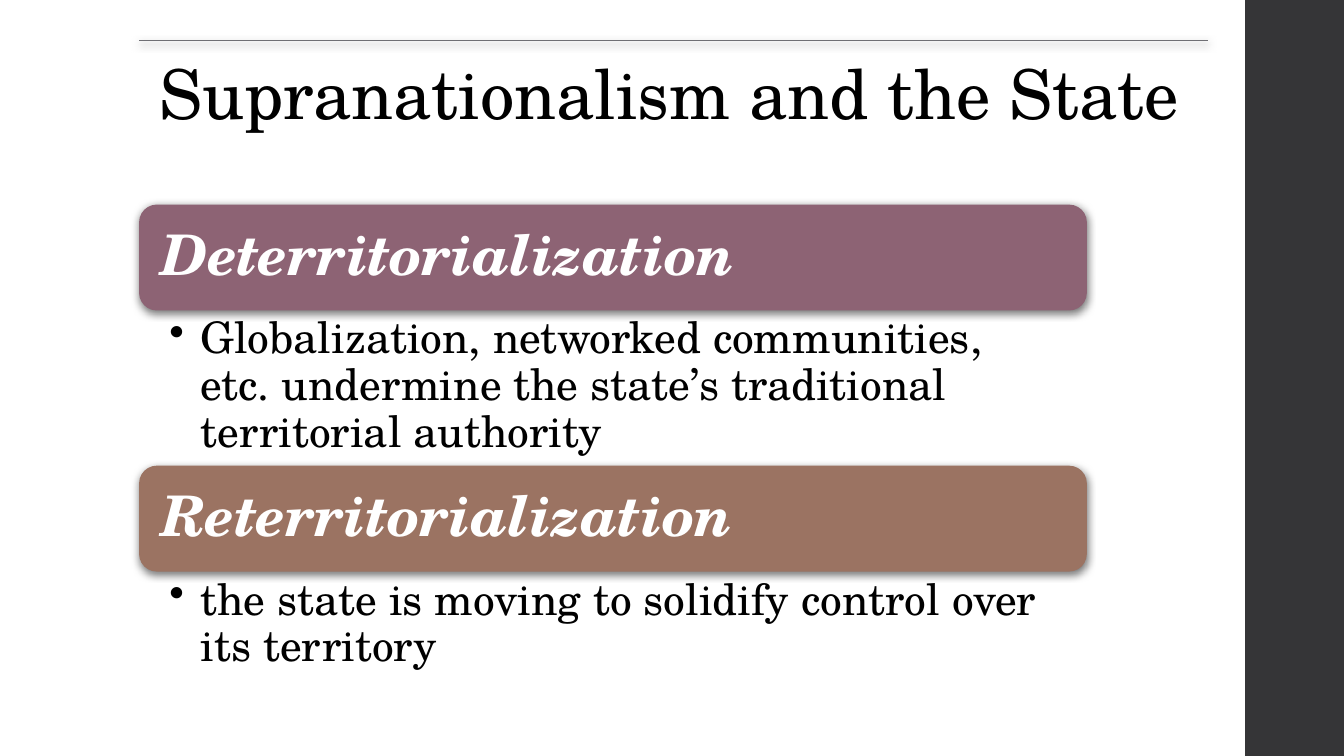
from lxml.etree import SubElement
from pptx import Presentation
from pptx.dml.color import RGBColor
from pptx.enum.shapes import MSO_CONNECTOR, MSO_SHAPE
from pptx.enum.text import MSO_ANCHOR, PP_ALIGN
from pptx.oxml.ns import qn
from pptx.util import Inches, Pt

FONT = "TeX Gyre Schola"
BLACK = RGBColor(0x00, 0x00, 0x00)
WHITE = RGBColor(0xFF, 0xFF, 0xFF)
DARK = RGBColor(0x35, 0x35, 0x37)
GRAY = RGBColor(0x6F, 0x6F, 0x74)
PLUM = RGBColor(0x8D, 0x63, 0x74)
BROWN = RGBColor(0x9B, 0x73, 0x62)

LEFT = 1.38
BAR_H = 1.05
TOPICS = [
    ("Deterritorialization", PLUM, 1.54,
     "Globalization, networked communities, etc. undermine "
     "the state’s traditional territorial authority"),
    ("Reterritorialization", BROWN, 1.06,
     "the state is moving to solidify control over its territory"),
]


def add_glow(item):
    """Give a shape or connector a soft shadow straight below it."""
    props = item._element.spPr
    for old in props.findall(qn("a:effectLst")):
        props.remove(old)
    effects = SubElement(props, qn("a:effectLst"))
    shade = SubElement(effects, qn("a:outerShdw"), blurRad=str(Pt(6)),
                       dist=str(Pt(2)), dir="5400000", rotWithShape="0")
    color = SubElement(shade, qn("a:srgbClr"), val=str(BLACK))
    SubElement(color, qn("a:alpha"), val="55000")


def add_block(slide, kind, box, fill):
    block = slide.shapes.add_shape(kind, *map(Inches, box))
    block.shadow.inherit = False
    block.fill.solid()
    block.fill.fore_color.rgb = fill
    block.line.fill.background()
    return block


def write(shape, text, insets, anchor=MSO_ANCHOR.TOP, color=BLACK, **style):
    """Fill a shape with one paragraph; insets run left, top, right, bottom."""
    frame = shape.text_frame
    frame.word_wrap = True
    frame.vertical_anchor = anchor
    for side, inset in zip(("left", "top", "right", "bottom"), insets):
        setattr(frame, f"margin_{side}", Inches(inset))
    para = frame.paragraphs[0]
    para.alignment = PP_ALIGN.LEFT
    para.line_spacing = 0.9
    run = para.add_run()
    run.text = text
    run.font.color.rgb = color
    for name, value in {"name": FONT, **style}.items():
        setattr(run.font, name, value)
    return para


def add_bullet(para):
    props = para._p.get_or_add_pPr()
    indent = Inches(0.31)
    props.set("marL", str(indent))
    props.set("indent", str(-indent))
    SubElement(props, qn("a:buChar"), char="•")


def add_title(slide, left, top, width, height):
    rule = slide.shapes.add_connector(
        MSO_CONNECTOR.STRAIGHT,
        *map(Inches, (left, top, left + width, top)))
    rule.line.color.rgb = GRAY
    rule.line.width = Pt(0.75)
    add_glow(rule)
    title = slide.shapes.add_textbox(*map(Inches, (left, top, width, height)))
    write(title, "Supranationalism and the State", [0.2] * 4, size=Pt(49))


def add_topics(slide, left, top, width):
    """Stack each heading bar above its bullet."""
    for name, fill, height, detail in TOPICS:
        bar = add_block(slide, MSO_SHAPE.ROUNDED_RECTANGLE,
                        (left, top, width, BAR_H), fill)
        add_glow(bar)
        write(bar, name, [0.17] * 4, MSO_ANCHOR.MIDDLE, WHITE,
              size=Pt(40), bold=True, italic=True)
        top += BAR_H
        note = slide.shapes.add_textbox(
            *map(Inches, (left, top, width, height)))
        add_bullet(write(note, detail, (0.3, 0.06, 0.31, 0.06), size=Pt(31)))
        top += height


def main():
    deck = Presentation()
    deck.slide_width = Inches(13.33)
    deck.slide_height = Inches(7.5)
    slide = deck.slides.add_slide(deck.slide_layouts[6])
    add_block(slide, MSO_SHAPE.RECTANGLE, (12.35, 0, 0.98, 7.5), DARK)
    add_title(slide, LEFT, 0.4, 10.6, 1.45)
    add_topics(slide, LEFT, 2.03, 9.4)
    deck.save("out.pptx")


if __name__ == "__main__":
    main()
